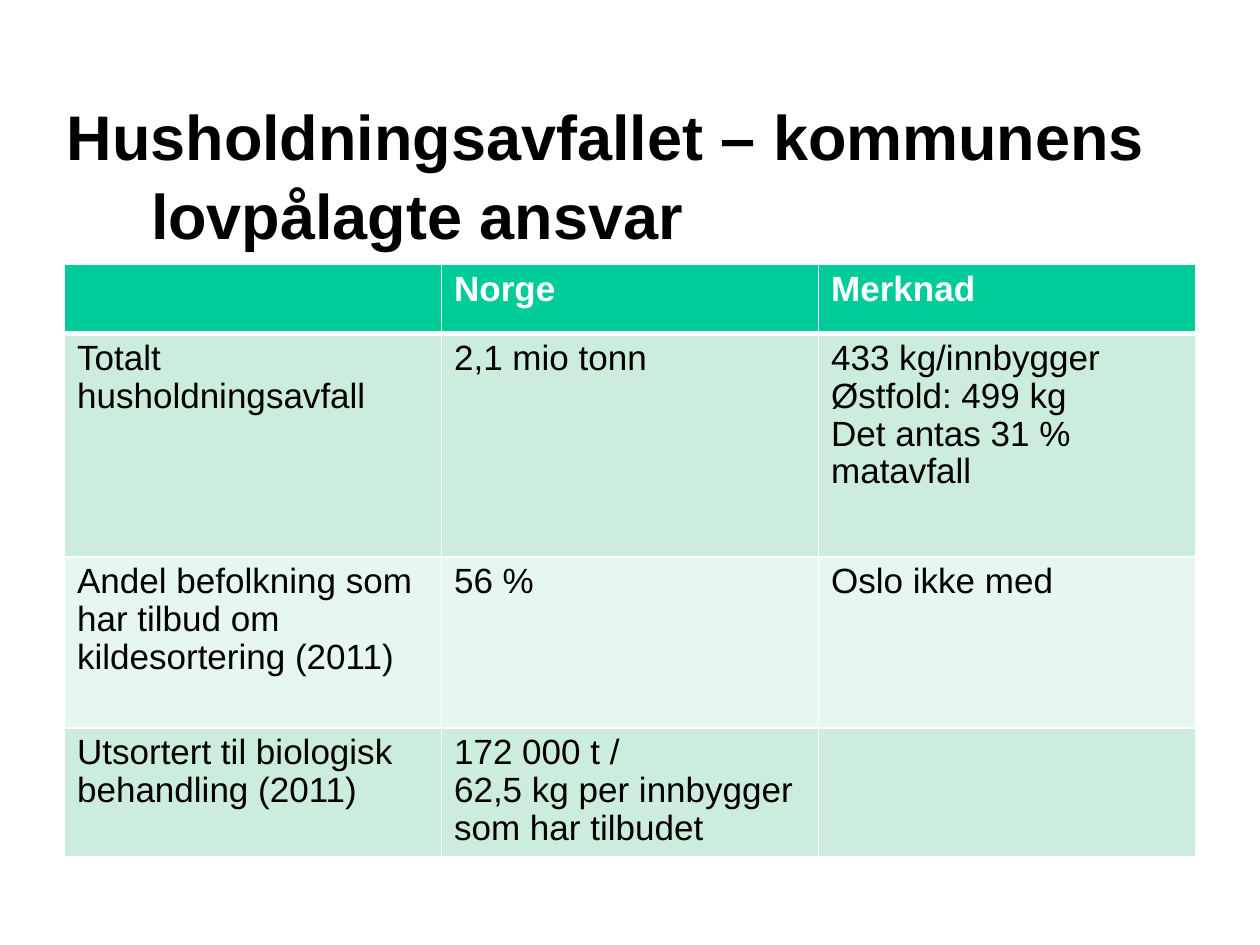
"""Build a slide with a table on household waste in Norway."""
import lxml.etree
import pptx
import pptx.dml.color
import pptx.enum.text
import pptx.oxml.ns
import pptx.util

Cm = pptx.util.Cm
Pt = pptx.util.Pt
COLORS = {
    "header": "00CC99",
    "odd": "CCECDE",
    "even": "E7F6EF",
    "white": "FFFFFF",
    "black": "000000",
}
ROWS = [
    ["", "Norge", "Merknad"],
    ["Totalt husholdningsavfall", "2,1 mio tonn",
     "433 kg/innbygger\nØstfold: 499 kg\nDet antas 31 % matavfall"],
    ["Andel befolkning som har tilbud om kildesortering (2011)", "56 %", "Oslo ikke med"],
    ["Utsortert til biologisk behandling (2011)",
     "172 000 t / \v62,5 kg per innbygger som har tilbudet", ""],
]
ROW_HEIGHTS = [1.4, 4.5, 3.45, 2.59]
ROW_FILLS = ["header", "odd", "even", "odd"]
COLUMN_WIDTH = 7.6


def write_text(frame, text, size, color="black", bold=False, spacing=1.0):
    frame.text = text
    for para in frame.paragraphs:
        para.alignment = pptx.enum.text.PP_ALIGN.LEFT
        para.line_spacing = spacing
        para.font.name = "Arial"
        para.font.size = Pt(size)
        para.font.bold = bold
        para.font.color.rgb = pptx.dml.color.RGBColor.from_string(COLORS[color])


def add_borders(cell, top, bottom):
    properties = cell._tc.get_or_add_tcPr()
    qn = pptx.oxml.ns.qn
    widths = {"a:lnL": 1, "a:lnR": 1, "a:lnT": top, "a:lnB": bottom}
    for position, (tag, width) in enumerate(widths.items()):
        line = lxml.etree.Element(qn(tag), w=str(Pt(width)))
        fill = lxml.etree.SubElement(line, qn("a:solidFill"))
        lxml.etree.SubElement(fill, qn("a:srgbClr"), val=COLORS["white"])
        properties.insert(position, line)


deck = pptx.Presentation()
deck.slide_width = Cm(25.4)
deck.slide_height = Cm(19.05)
page = deck.slides.add_slide(deck.slide_layouts[5])

title = page.shapes.title
title.left, title.top, title.width, title.height = Cm(1.09), Cm(1.9), Cm(23.01), Cm(3.18)
title.text_frame.auto_size = pptx.enum.text.MSO_AUTO_SIZE.NONE
title.text_frame.vertical_anchor = pptx.enum.text.MSO_ANCHOR.MIDDLE
write_text(title.text_frame, "Husholdningsavfallet – kommunens lovpålagte ansvar",
           size=36, bold=True, spacing=1.05)
title_format = title.text_frame.paragraphs[0]._p.get_or_add_pPr()
title_format.set("marL", str(Cm(1.7)))
title_format.set("indent", str(Cm(-1.7)))

table = page.shapes.add_table(
    len(ROWS), len(ROWS[0]), Cm(1.3), Cm(5.33),
    Cm(COLUMN_WIDTH * len(ROWS[0])), Cm(sum(ROW_HEIGHTS))).table
for column in table.columns:
    column.width = Cm(COLUMN_WIDTH)

for row_number, texts in enumerate(ROWS):
    is_header = row_number == 0
    table.rows[row_number].height = Cm(ROW_HEIGHTS[row_number])
    for column_number, text in enumerate(texts):
        cell = table.cell(row_number, column_number)
        cell.fill.solid()
        cell.fill.fore_color.rgb = pptx.dml.color.RGBColor.from_string(
            COLORS[ROW_FILLS[row_number]])
        add_borders(cell, top=3 if row_number == 1 else 1, bottom=3 if is_header else 1)
        write_text(cell.text_frame, text, size=20, bold=is_header, spacing=0.97,
                   color="white" if is_header else "black")

deck.save("out.pptx")
